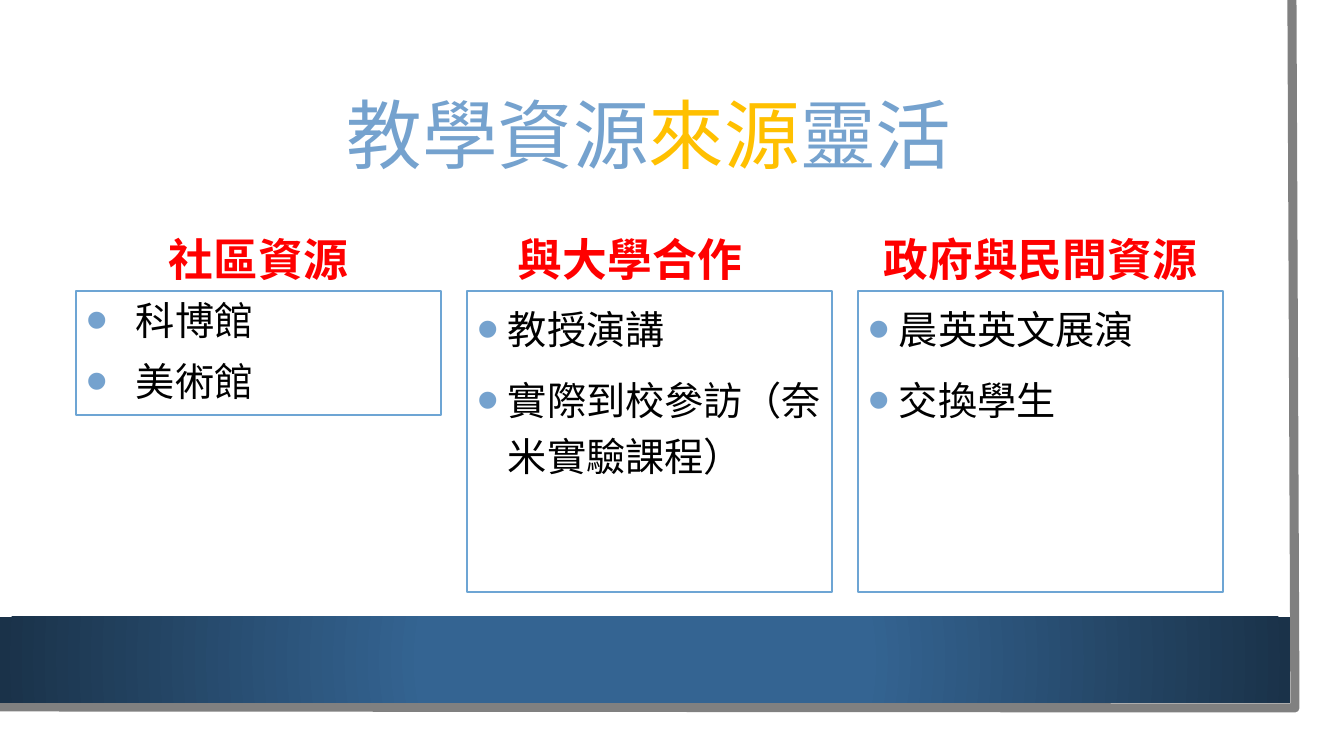
"""Build a slide with a title and three columns of teaching resources."""
from lxml import etree
from pptx import Presentation
from pptx.dml.color import RGBColor
from pptx.enum.shapes import MSO_SHAPE
from pptx.enum.text import MSO_ANCHOR, PP_ALIGN
from pptx.oxml import parse_xml
from pptx.oxml.ns import nsdecls, qn
from pptx.util import Pt

RECT = MSO_SHAPE.RECTANGLE
TOP, MIDDLE, BOTTOM = MSO_ANCHOR.TOP, MSO_ANCHOR.MIDDLE, MSO_ANCHOR.BOTTOM
LEFT, CENTER = PP_ALIGN.LEFT, PP_ALIGN.CENTER
SCALE = 914400 / 100.8
FONT = "Arial Narrow"
SKY, GOLD, RED, BLACK = "75A2CE", "FFC000", "FF0000", "000000"
COLS = [
    ("社區資源", ["科博館", "美術館"], 124, 50, 1.0, 0),
    ("與大學合作", ["教授演講", "實際到校參訪（奈米實驗課程）"], 301, 31, 1.2, 39),
    ("政府與民間資源", ["晨英英文展演", "交換學生"], 301, 31, 1.2, 0),
]


def px(n):
    """Turn pixels into EMU."""
    return round(n * SCALE)


def color(code):
    """Turn a hex string into a colour."""
    return RGBColor.from_string(code)


def style(run, size, code, name=FONT, bold=False):
    """Set the font of a run."""
    font = run.font
    font.size, font.name, font.bold = Pt(size), name, bold
    font.color.rgb = color(code)


def add_title(slide, parts):
    """Place the title and fill it with coloured parts."""
    title = slide.shapes.title
    title.left, title.top, title.width, title.height = map(px, (76, 76, 1146, 127))
    frame = title.text_frame
    frame.vertical_anchor = MIDDLE
    para = frame.paragraphs[0]
    para.alignment, para.line_spacing = CENTER, 0.9
    for text, code in parts:
        run = para.add_run()
        run.text = text
        style(run, 54, code, "Noto Sans CJK SC")


def add_head(slide, text, x, pad):
    """Add a column heading with extra room on its right."""
    box = slide.shapes.add_textbox(px(x), px(228), px(365), px(63))
    frame = box.text_frame
    frame.word_wrap, frame.vertical_anchor = True, BOTTOM
    frame.margin_right += px(pad)
    frame.text = text
    para = frame.paragraphs[0]
    para.alignment, para.line_spacing = CENTER, 0.9
    style(para.runs[0], 32, RED, bold=True)


def add_dot(para, indent):
    """Give a paragraph a large round bullet."""
    props = para._p.get_or_add_pPr()
    props.set("marL", str(px(indent)))
    props.set("indent", str(-px(indent)))
    tint = etree.SubElement(props, qn("a:buClr"))
    etree.SubElement(tint, qn("a:srgbClr"), val=SKY)
    etree.SubElement(props, qn("a:buSzPct"), val="160000")
    etree.SubElement(props, qn("a:buFont"), typeface="Arial")
    etree.SubElement(props, qn("a:buChar"), char="•")


def add_list(slide, items, x, height, indent, space):
    """Add a framed bullet list."""
    box = slide.shapes.add_shape(RECT, px(x), px(291), px(365), px(height))
    box.shadow.inherit = False
    box.fill.solid()
    box.fill.fore_color.rgb = color("FFFFFF")
    box.line.color.rgb = color("6DA5D4")
    box.line.width = Pt(1.5)
    frame = box.text_frame
    frame.word_wrap, frame.vertical_anchor = True, TOP
    frame.text = "\n".join(items)
    for i, para in enumerate(frame.paragraphs):
        add_dot(para, indent)
        para.alignment, para.line_spacing = LEFT, space
        para.space_before = Pt(10 if i else 0)
        style(para.runs[0], 28, BLACK)


def add_edge(slide):
    """Draw the grey edge on the right and at the bottom."""
    path = slide.shapes.build_freeform(1292, 0, SCALE)
    path.add_line_segments([(1295, 708), (0, 707)], close=False)
    edge = path.convert_to_shape()
    edge.shadow.inherit = False
    edge.fill.background()
    edge.line.color.rgb = color("808080")
    edge.line.width = Pt(6.5)


def add_band(slide):
    """Draw the blue band with a radial gradient."""
    band = slide.shapes.add_shape(RECT, 0, px(617), px(1290), px(86))
    band.shadow.inherit = False
    band.line.fill.background()
    band.fill.solid()
    props = band._element.spPr
    grad = parse_xml(
        f'<a:gradFill {nsdecls("a")} rotWithShape="1"><a:gsLst>'
        '<a:gs pos="34000"><a:srgbClr val="346492"/></a:gs>'
        '<a:gs pos="100000"><a:srgbClr val="1A3249"/></a:gs></a:gsLst>'
        '<a:path path="circle"><a:fillToRect l="50000" t="50000" r="50000" b="50000"/>'
        '</a:path></a:gradFill>')
    props.replace(props.find(qn("a:solidFill")), grad)


def main():
    """Build and save the slide."""
    deck = Presentation()
    deck.slide_width, deck.slide_height = px(1344), px(756)
    slide = deck.slides.add_slide(deck.slide_layouts[5])
    add_edge(slide)
    add_band(slide)
    add_title(slide, [("教學資源", SKY), ("來源", GOLD), ("靈活", SKY)])
    for i, (head, items, height, indent, space, pad) in enumerate(COLS):
        x = 76 + 391 * i
        add_head(slide, head, x, pad)
        add_list(slide, items, x, height, indent, space)
    deck.save("out.pptx")


if __name__ == "__main__":
    main()
